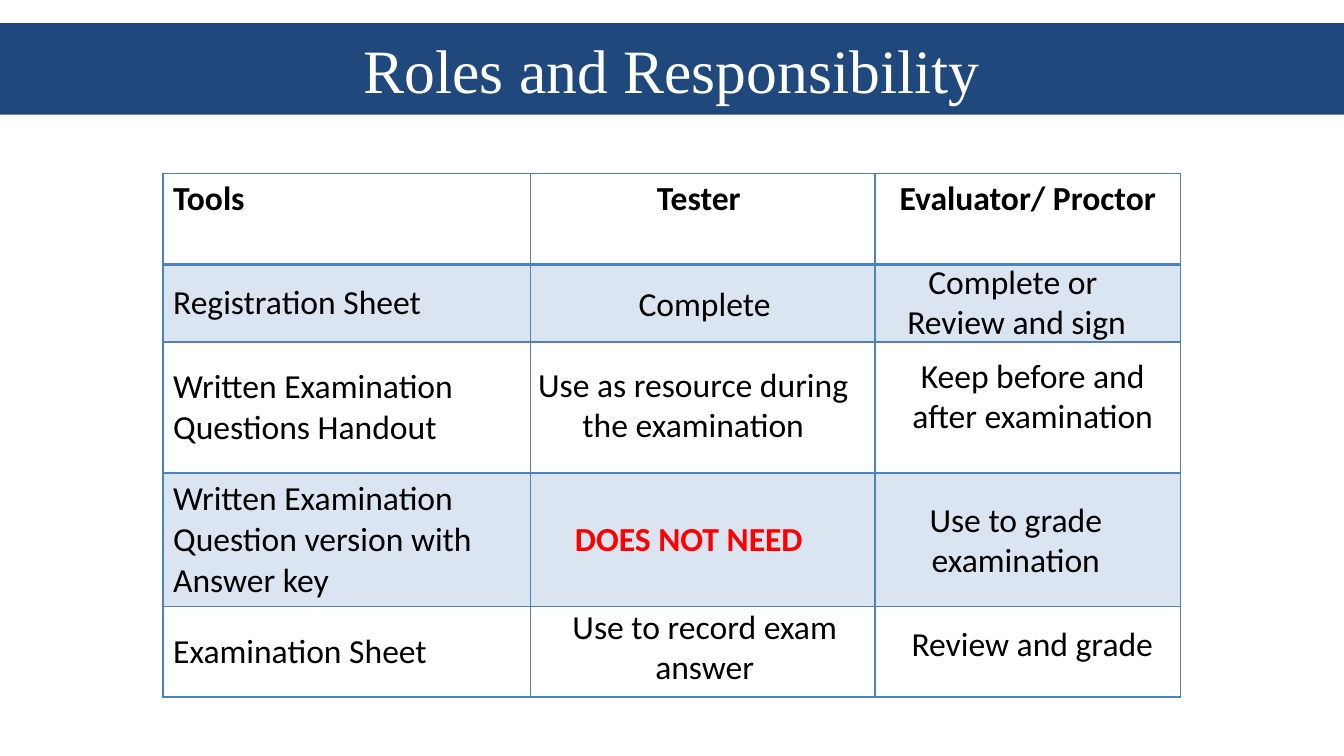
from lxml import etree
from pptx import Presentation
from pptx import util as u
from pptx.dml import color
from pptx.enum import text
from pptx.oxml import ns

COLORS = {"navy": "1F497D", "blue": "4F81BD", "black": "000000",
          "white": "FFFFFF", "red": "FF0000"}


def style(tf, name="black", size=24, bold=False, font="Calibri", align=text.PP_ALIGN.CENTER):
    for p in tf.paragraphs:
        p.alignment = align
        for r in p.runs:
            r.font.name, r.font.size, r.font.bold = font, u.Pt(size), bold
            r.font.color.rgb = color.RGBColor.from_string(COLORS[name])


def add_border(tcPr, index, side, width):
    ln = etree.Element(ns.qn(f"a:ln{side}"), w=str(u.Pt(width)))
    fill = etree.SubElement(ln, ns.qn("a:solidFill"))
    etree.SubElement(fill, ns.qn("a:srgbClr"), val=COLORS["blue"])
    tcPr.insert(index, ln)


prs = Presentation()
prs.slide_width, prs.slide_height = u.Cm(33.87), u.Cm(19.05)
s = prs.slides.add_slide(prs.slide_layouts[5])

# Table grid with the header row and the tool names
col_widths = [9.25, 8.69, 7.7]
row_heights = [2.29, 1.96, 3.3, 3.3, 2.29]
rows = [["Tools", "Tester ", "Evaluator/ Proctor"],
        ["Registration Sheet"],
        ["Written Examination Questions Handout"],
        ["Written Examination Question version with Answer key"],
        ["Examination Sheet"]]
table = s.shapes.add_table(len(rows), len(col_widths), u.Cm(4.11), u.Cm(4.37),
                           u.Cm(sum(col_widths)), u.Cm(sum(row_heights))).table
table.first_row = table.horz_banding = False
for col, width in zip(table.columns, col_widths):
    col.width = u.Cm(width)
for i, height in enumerate(row_heights):
    table.rows[i].height = u.Cm(height)
    for j in range(len(col_widths)):
        cell = table.cell(i, j)
        if j < len(rows[i]):
            cell.text_frame.text = rows[i][j]
            style(cell.text_frame, bold=i == 0,
                  align=text.PP_ALIGN.CENTER if j else text.PP_ALIGN.LEFT)
        if i:
            cell.vertical_anchor = text.MSO_ANCHOR.MIDDLE
        tcPr = cell._tc.get_or_add_tcPr()
        # Every second row is tinted
        if i % 2:
            cell.fill.solid()
            cell.fill.fore_color.rgb = color.RGBColor.from_string(COLORS["blue"])
            clr = tcPr.find(".//" + ns.qn("a:srgbClr"))
            etree.SubElement(clr, ns.qn("a:alpha"), val="20000")
        else:
            cell.fill.background()
        # The line below the header is heavier
        widths = {"L": 1, "R": 1, "T": 2 if i == 1 else 1, "B": 2 if i == 0 else 1}
        for k, (side, width) in enumerate(widths.items()):
            add_border(tcPr, k, side, width)

# Duties laid over the table: text, left, top, width, height
duties = [("Complete", 15.52, 7.01, 4.47, 1.27),
          ("Complete or \nReview and sign", 21.77, 6.45, 7.7, 2.31),
          ("Keep before and after examination", 22.2, 8.81, 7.65, 2.31),
          ("Use as resource during the examination", 12.9, 9.04, 9.14, 2.31),
          ("Use to grade examination", 21.03, 12.45, 9.14, 2.31),
          ("DOES NOT NEED", 13.79, 12.93, 7.14, 1.27),
          ("Use to record exam answer", 13.44, 15.14, 8.64, 2.31),
          ("Review and grade", 22.28, 15.57, 7.47, 1.27)]
for duty, *box in duties:
    tf = s.shapes.add_textbox(*map(u.Cm, box)).text_frame
    tf.word_wrap = True
    tf.auto_size = text.MSO_AUTO_SIZE.SHAPE_TO_FIT_TEXT
    tf.text = duty
    warning = duty == "DOES NOT NEED"
    style(tf, "red" if warning else "black", bold=warning)

# Title band
sp = s.shapes.title
sp.left, sp.top, sp.width, sp.height = map(u.Cm, (0, 0.58, 33.87, 2.31))
sp.fill.solid()
sp.fill.fore_color.rgb = color.RGBColor.from_string(COLORS["navy"])
tf = sp.text_frame
tf.text = "Roles and Responsibility"
tf.vertical_anchor = text.MSO_ANCHOR.MIDDLE
tf.auto_size = text.MSO_AUTO_SIZE.NONE
style(tf, "white", size=44, font="Times New Roman")

prs.save("out.pptx")
